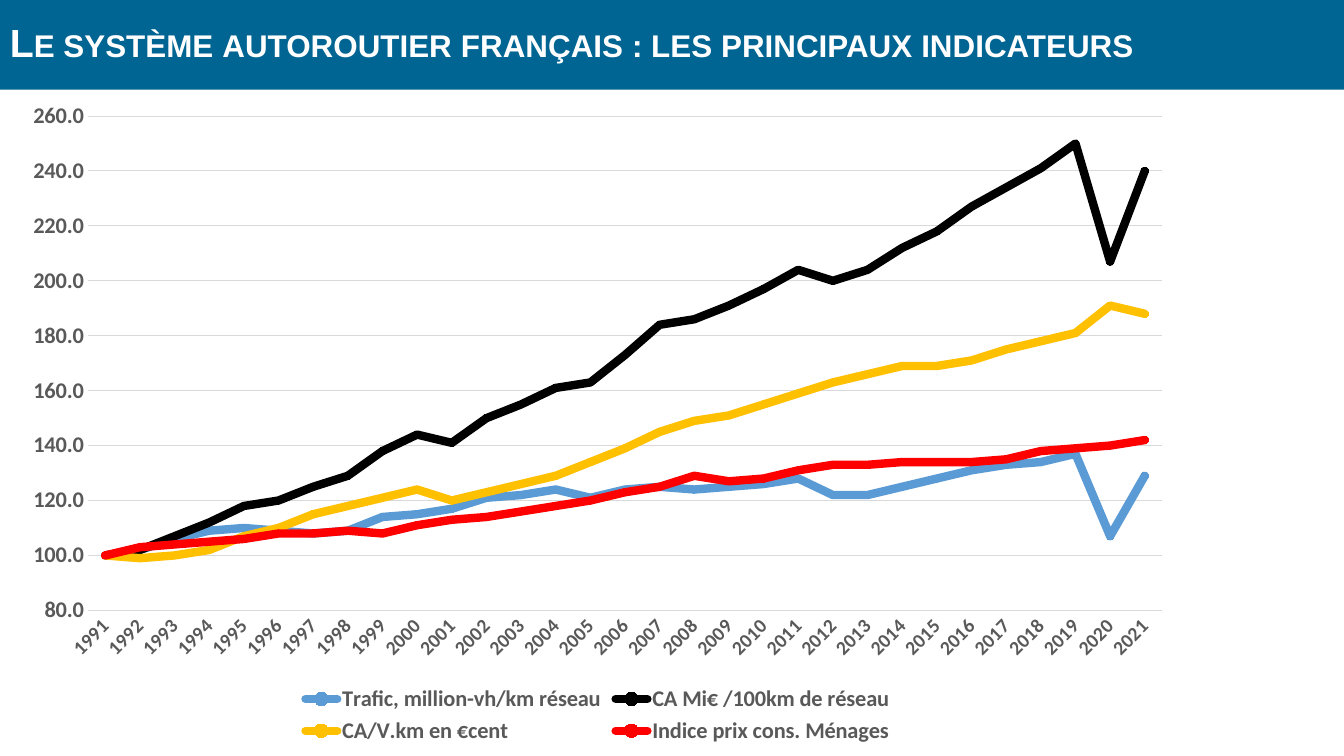
from lxml.etree import SubElement
from pptx import Presentation
from pptx.chart.data import CategoryChartData
from pptx.dml.color import RGBColor
from pptx.enum.chart import XL_CHART_TYPE, XL_LEGEND_POSITION, XL_MARKER_STYLE, XL_TICK_MARK
from pptx.enum.shapes import MSO_SHAPE
from pptx.enum.text import MSO_ANCHOR, PP_ALIGN
from pptx.oxml import parse_xml
from pptx.oxml.ns import nsdecls, qn
from pptx.util import Inches, Pt

BANNER = RGBColor(0x00, 0x65, 0x93)
WHITE = RGBColor(0xFF, 0xFF, 0xFF)
GREY = RGBColor(0x59, 0x59, 0x59)
GRID = RGBColor(0xD9, 0xD9, 0xD9)
BLUE = RGBColor(0x5B, 0x9B, 0xD5)
BLACK = RGBColor(0x00, 0x00, 0x00)
AMBER = RGBColor(0xFF, 0xC0, 0x00)
RED = RGBColor(0xFF, 0x00, 0x00)

YEARS = [str(year) for year in range(1991, 2022)]
INDICATORS = [
    ("Trafic, million-vh/km réseau", BLUE,
     [100, 102, 106, 109, 110, 109, 108, 109, 114, 115, 117, 121, 122, 124, 121, 124,
      125, 124, 125, 126, 128, 122, 122, 125, 128, 131, 133, 134, 137, 107, 129]),
    ("CA Mi€ /100km de réseau", BLACK,
     [100, 102, 107, 112, 118, 120, 125, 129, 138, 144, 141, 150, 155, 161, 163, 173,
      184, 186, 191, 197, 204, 200, 204, 212, 218, 227, 234, 241, 250, 207, 240]),
    ("CA/V.km en €cent", AMBER,
     [100, 99, 100, 102, 107, 110, 115, 118, 121, 124, 120, 123, 126, 129, 134, 139,
      145, 149, 151, 155, 159, 163, 166, 169, 169, 171, 175, 178, 181, 191, 188]),
    ("Indice prix cons. Ménages", RED,
     [100, 103, 104, 105, 106, 108, 108, 109, 108, 111, 113, 114, 116, 118, 120, 123,
      125, 129, 127, 128, 131, 133, 133, 134, 134, 134, 135, 138, 139, 140, 142]),
]


class SlideBuilder:
    title_font = "Arial"
    chart_font = "Calibri"

    def __init__(self, slide):
        self.s = slide

    def banner(self, text, left, top, width, height):
        sp = self.s.shapes.add_shape(MSO_SHAPE.RECTANGLE, Inches(left), Inches(top),
                                     Inches(width), Inches(height))
        sp.shadow.inherit = False
        sp.fill.solid()
        sp.fill.fore_color.rgb = BANNER
        sp.line.fill.background()
        tf = sp.text_frame
        tf.word_wrap = True
        tf.vertical_anchor = MSO_ANCHOR.MIDDLE
        p = tf.paragraphs[0]
        p.alignment = PP_ALIGN.LEFT
        p.line_spacing = 0.9
        r = p.add_run()
        r.text = text
        r.font.name = self.title_font
        r.font.size = Pt(28)
        r.font.bold = True
        r.font.color.rgb = WHITE
        r._r.get_or_add_rPr().set("cap", "small")

    def style_font(self, font, size):
        font.name = self.chart_font
        font.size = Pt(size)
        font.bold = True
        font.color.rgb = GREY

    def style_line(self, line, color, width):
        line.color.rgb = color
        line.width = Pt(width)

    def place_plot(self, chart, **fractions):
        plot_area = chart._chartSpace.chart.plotArea
        for layout in plot_area.findall(qn("c:layout")):
            plot_area.remove(layout)
        layout = parse_xml(f"<c:layout {nsdecls('c')}/>")
        plot_area.insert(0, layout)
        manual = SubElement(layout, qn("c:manualLayout"))
        settings = {"layoutTarget": "inner", "xMode": "edge", "yMode": "edge", **fractions}
        for name, value in settings.items():
            SubElement(manual, qn(f"c:{name}")).set("val", str(value))

    def style_axes(self, chart):
        years, index = chart.category_axis, chart.value_axis
        for axis, size in ((years, 14), (index, 16)):
            axis.major_tick_mark = XL_TICK_MARK.NONE
            axis.minor_tick_mark = XL_TICK_MARK.NONE
            self.style_font(axis.tick_labels.font, size)
        self.style_line(years.format.line, GRID, 0.75)
        years._element.txPr.bodyPr.set("rot", "-2700000")
        index.format.line.fill.background()
        index.minimum_scale, index.maximum_scale = 80, 260
        index.major_unit = 20
        index.tick_labels.number_format = "0.0"
        index.tick_labels.number_format_is_linked = False
        self.style_line(index.major_gridlines.format.line, GRID, 0.75)

    def line_chart(self, categories, series, left, top, width, height):
        data = CategoryChartData()
        data.categories = categories
        for name, _, values in series:
            data.add_series(name, values)
        chart = self.s.shapes.add_chart(XL_CHART_TYPE.LINE_MARKERS, Inches(left), Inches(top),
                                        Inches(width), Inches(height), data).chart
        chart.has_title = False
        chart.font.name = self.chart_font
        chart.font.size = Pt(10)
        self.style_axes(chart)
        self.place_plot(chart, x=0.067, y=0.04, w=0.913, h=0.75)
        chart.has_legend = True
        chart.legend.position = XL_LEGEND_POSITION.BOTTOM
        chart.legend.include_in_layout = False
        self.style_font(chart.legend.font, 16)
        plot = chart.plots[0]
        plot.vary_by_categories = False
        for ser, (_, color, _) in zip(plot.series, series):
            ser.smooth = False
            self.style_line(ser.format.line, color, 6)
            ser.format.line._get_or_add_ln().set("cap", "rnd")
            ser.marker.style = XL_MARKER_STYLE.CIRCLE
            ser.marker.size = 5
            ser.marker.format.fill.solid()
            ser.marker.format.fill.fore_color.rgb = color
            ser.marker.format.line.color.rgb = color


def main():
    prs = Presentation()
    prs.slide_width, prs.slide_height = Inches(13.33), Inches(7.5)
    builder = SlideBuilder(prs.slides.add_slide(prs.slide_layouts[6]))
    builder.line_chart(YEARS, INDICATORS, 0.09, 0.89, 11.67, 6.54)
    builder.banner("Le système autoroutier français : les principaux indicateurs",
                   0, 0, 13.33, 0.89)
    prs.save("out.pptx")


if __name__ == "__main__":
    main()
